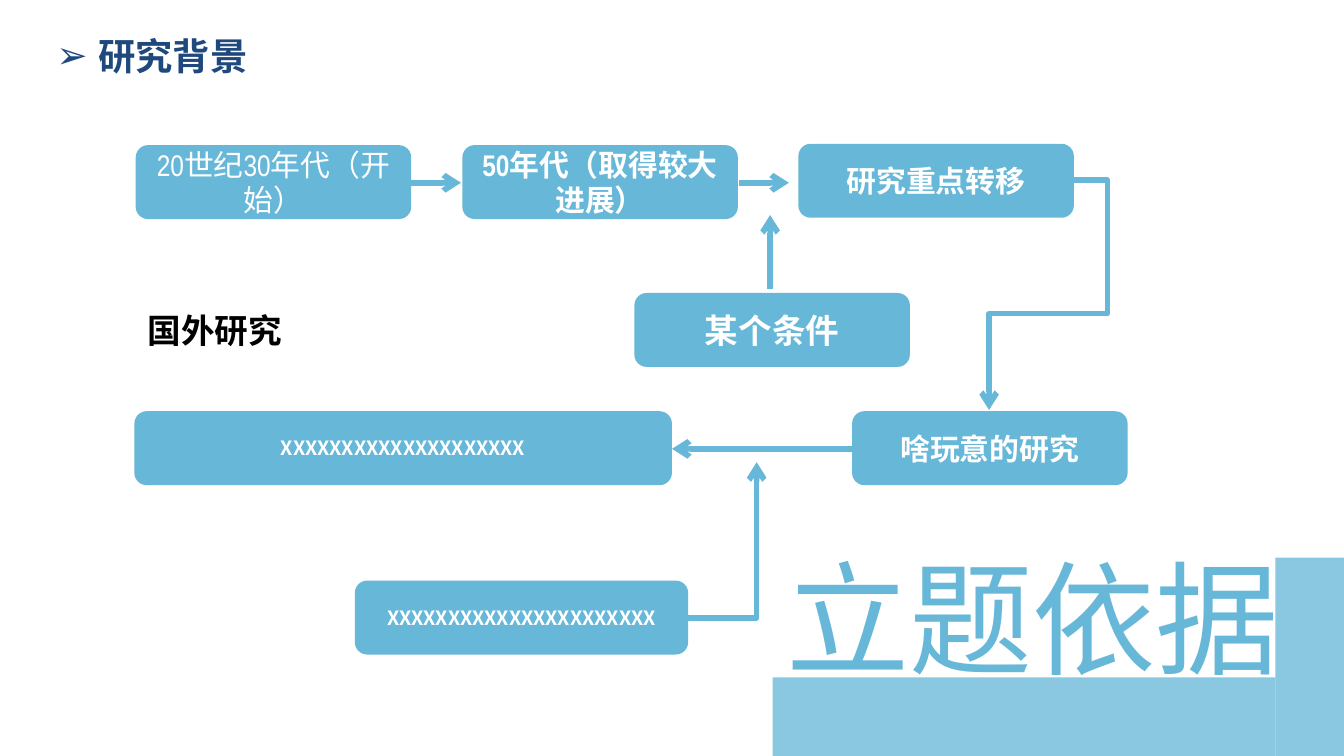
"""Build the research background slide with its flow of foreign studies."""
from lxml.etree import SubElement
from pptx import Presentation
from pptx.dml.color import RGBColor
from pptx.enum.shapes import MSO_CONNECTOR, MSO_SHAPE
from pptx.enum.text import MSO_ANCHOR, MSO_AUTO_SIZE, PP_ALIGN
from pptx.oxml.ns import qn
from pptx.util import Inches, Pt

BLUE = RGBColor(0x67, 0xB7, 0xD8)
NAVY = RGBColor(0x1F, 0x49, 0x7D)
BLACK = RGBColor(0, 0, 0)
WHITE = RGBColor(255, 255, 255)
SANS = "Noto Sans CJK SC"
NARROW = "Arial Narrow"
BOX_HEIGHT = 0.55


def write(shape, text, size, color, bold=True, font=SANS, align=PP_ALIGN.LEFT):
    paragraph = shape.text_frame.paragraphs[0]
    paragraph.text = text
    paragraph.alignment = align
    paragraph.font.size = Pt(size)
    paragraph.font.bold = bold
    paragraph.font.color.rgb = color
    paragraph.font.name = font
    properties = paragraph._p.pPr.find(qn("a:defRPr"))
    SubElement(properties, qn("a:ea"), typeface=SANS)


def add_block(kind, left, top, width, height):
    block = page.shapes.add_shape(
        kind, Inches(left), Inches(top), Inches(width), Inches(height))
    block.shadow.inherit = False
    block.fill.solid()
    block.fill.fore_color.rgb = BLUE
    block.line.fill.background()
    return block


deck = Presentation()
deck.slide_width = Inches(10)
deck.slide_height = deck.slide_width * 9 // 16
page = deck.slides.add_slide(deck.slide_layouts[5])

for left, top, width, height in [(9.49, 4.15, 1.34, 1.5), (5.75, 5.04, 3.74, 0.61)]:
    band = add_block(MSO_SHAPE.RECTANGLE, left, top, width, height)
    fill_color = band._element.spPr.find(qn("a:solidFill"))[0]
    SubElement(fill_color, qn("a:alpha"), val="77000")

title = page.shapes.title
title.left, title.top = Inches(0.32), Inches(0.2)
title.width, title.height = Inches(2.52), Inches(0.43)
title.text_frame.auto_size = MSO_AUTO_SIZE.NONE
title.text_frame.vertical_anchor = MSO_ANCHOR.TOP
title_format = title.text_frame.paragraphs[0]._p.get_or_add_pPr()
title_format.set("marL", str(Inches(0.31)))
title_format.set("indent", str(Inches(-0.31)))
SubElement(title_format, qn("a:buFont"), typeface="Arial")
SubElement(title_format, qn("a:buChar"), char="➢")
write(title, "研究背景", 20, NAVY)

labels = [
    ("立题依据", 5.75, 3.99, 4.49, 1.2, 66, BLUE, False, True),
    ("国外研究", 1, 2.26, 1.2, 0.4, 18, BLACK, True, False),
]
for text, left, top, width, height, size, color, bold, wrap in labels:
    label = page.shapes.add_textbox(
        Inches(left), Inches(top), Inches(width), Inches(height))
    label.text_frame.word_wrap = wrap
    write(label, text, size, color, bold)

steps = [
    ("20世纪30年代（开始）", 1.01, 1.08, 2.05, 16, False, NARROW),
    ("50年代（取得较大进展）", 3.44, 1.08, 2.05, 16, True, NARROW),
    ("研究重点转移", 5.94, 1.07, 2.05, 16, True, SANS),
    ("某个条件", 4.72, 2.18, 2.05, 18, True, SANS),
    ("啥玩意的研究", 6.34, 3.06, 2.05, 16, True, SANS),
    ("X" * 20, 1, 3.06, 4, 10.5, True, SANS),
    ("X" * 22, 2.64, 4.32, 2.48, 10.5, True, SANS),
]
for text, left, top, width, size, bold, font in steps:
    step = add_block(MSO_SHAPE.ROUNDED_RECTANGLE, left, top, width, BOX_HEIGHT)
    step.text_frame.word_wrap = True
    step.text_frame.vertical_anchor = MSO_ANCHOR.MIDDLE
    write(step, text, size, WHITE, bold, font, PP_ALIGN.CENTER)

arrows = [
    (3.06, 1.36, 3.43, 1.36, "line", []),
    (5.5, 1.36, 5.87, 1.36, "line", []),
    (5.73, 2.15, 5.73, 1.6, "line", []),
    (6.34, 3.34, 5, 3.34, "line", []),
    (7.99, 1.34, 7.36, 3.05, "bentConnector4", [-39700, 58100]),
    (5.12, 4.6, 5.63, 3.44, "bentConnector2", []),
]
for start_x, start_y, end_x, end_y, preset, bends in arrows:
    arrow = page.shapes.add_connector(
        MSO_CONNECTOR.STRAIGHT, Inches(start_x), Inches(start_y),
        Inches(end_x), Inches(end_y))
    arrow.line.color.rgb = BLUE
    arrow.line.width = Pt(3)
    shape_format = arrow._element.spPr
    SubElement(shape_format.find(qn("a:ln")), qn("a:tailEnd"), type="arrow")
    SubElement(shape_format, qn("a:effectLst"))
    geometry = shape_format.find(qn("a:prstGeom"))
    geometry.set("prst", preset)
    for number, bend in enumerate(bends, 1):
        SubElement(geometry.find(qn("a:avLst")), qn("a:gd"),
                   name=f"adj{number}", fmla=f"val {bend}")

deck.save("out.pptx")
